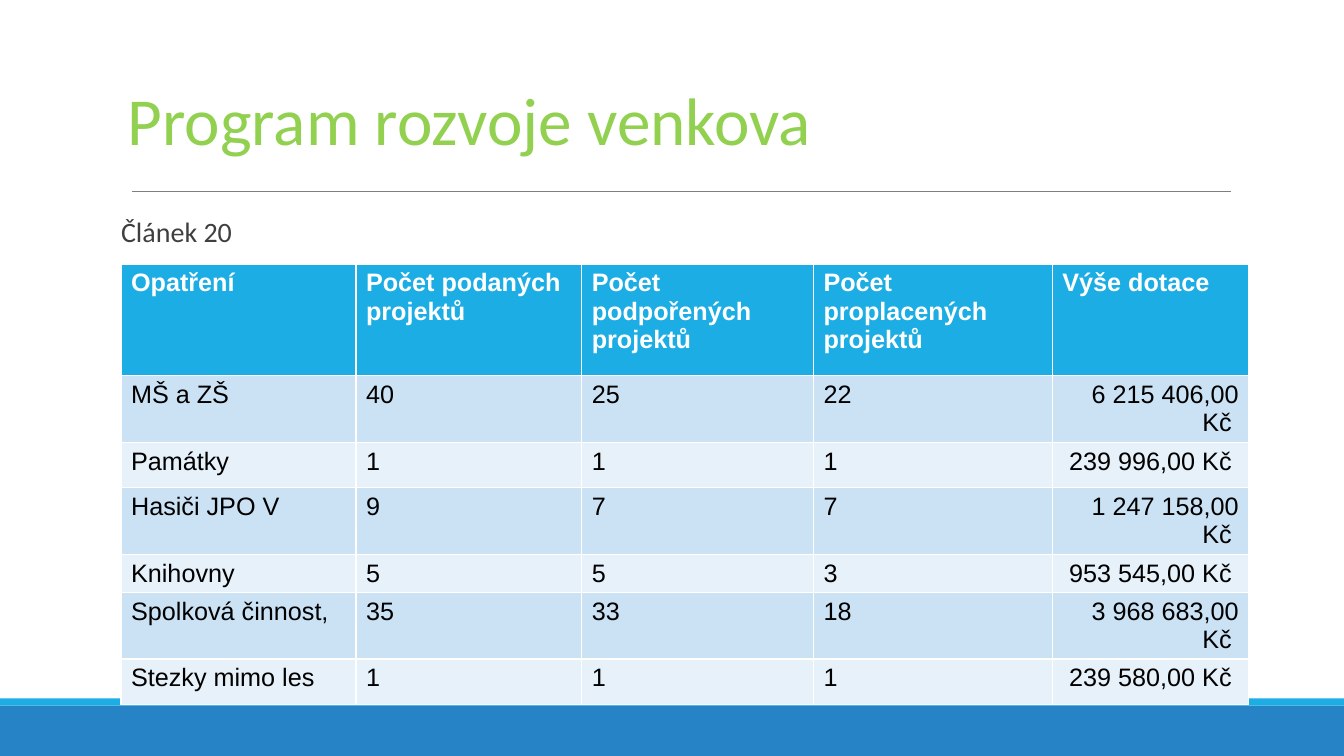
"""Build the slide on the rural programme with its table of grants."""
from lxml import etree
from pptx import Presentation, util as u
from pptx.dml.color import RGBColor as Rgb
from pptx.enum import shapes, text
from pptx.oxml.ns import qn


class Theme:
    lime, grey, rule = "92D050", "3F3F3F", "7F7F7F"
    sky, blue = "1CADE4", "2683C6"
    bands = "E7F1FA", "CBE2F5"
    white, black = "FFFFFF", "000000"
    head, body, cell = 48, 20, 18
    sans, grid = "Calibri", "Arial"


def write(frame, words, size, color, face=Theme.sans, bold=False,
          align=text.PP_ALIGN.LEFT, space=1.0):
    para = frame.paragraphs[0]
    props = para._p.get_or_add_pPr()
    props.set("marL", "0")
    props.set("indent", "0")
    etree.SubElement(props, qn("a:buNone"))
    para.alignment = align
    para.line_spacing = space
    para.space_before = u.Pt(0)
    run = para.add_run()
    run.text = words
    run.font.size = u.Pt(size)
    run.font.name = face
    run.font.bold = bold
    run.font.color.rgb = Rgb.from_string(color)


def place(shape, left, top, width, height):
    shape.left, shape.top = u.Cm(left), u.Cm(top)
    shape.width, shape.height = u.Cm(width), u.Cm(height)


deck = Presentation()
deck.slide_width, deck.slide_height = u.Cm(33.87), u.Cm(19.05)
slide = deck.slides.add_slide(deck.slide_layouts[1])

for top, high, color in ((17.78, 1.27, Theme.blue), (17.6, 0.18, Theme.sky)):
    band = slide.shapes.add_shape(
        shapes.MSO_SHAPE.RECTANGLE, 0, u.Cm(top), deck.slide_width, u.Cm(high))
    band.shadow.inherit = False
    band.fill.solid()
    band.fill.fore_color.rgb = Rgb.from_string(color)
    band.line.fill.background()

rule = slide.shapes.add_connector(
    shapes.MSO_CONNECTOR.STRAIGHT, u.Cm(3.33), u.Cm(4.83), u.Cm(31.01), u.Cm(4.83))
rule.line.color.rgb = Rgb.from_string(Theme.rule)
rule.line.width = u.Pt(0.75)
etree.SubElement(rule._element.spPr, qn("a:effectLst"))

title = slide.shapes.title
place(title, 2.97, 0.99, 27.94, 3.15)
title.text_frame.auto_size = text.MSO_AUTO_SIZE.NONE
title.text_frame.vertical_anchor = text.MSO_ANCHOR.BOTTOM
write(title.text_frame, "Program rozvoje venkova", Theme.head, Theme.lime, space=0.85)

body = slide.placeholders[1]
place(body, 3.05, 5.38, 27.94, 10.9)
body.text_frame.auto_size = text.MSO_AUTO_SIZE.NONE
body.text_frame.margin_left = body.text_frame.margin_right = 0
write(body.text_frame, "Článek 20", Theme.body, Theme.grey, space=0.9)

rows = [
    ("Opatření", "Počet podaných projektů", "Počet podpořených projektů",
     "Počet proplacených projektů", "Výše dotace"),
    ("MŠ a ZŠ", "40", "25", "22", "6 215 406,00 Kč "),
    ("Památky", "1", "1", "1", "239 996,00 Kč "),
    ("Hasiči JPO V", "9", "7", "7", "1 247 158,00 Kč "),
    ("Knihovny", "5", "5", "3", "953 545,00 Kč "),
    ("Spolková činnost,", "35", "33", "18", "3 968 683,00 Kč "),
    ("Stezky mimo les", "1", "1", "1", "239 580,00 Kč "),
]
wides = 5.92, 5.69, 5.84, 6.02, 4.95
highs = 2.82, 1.14, 1.14, 0.58, 0.58, 1.19, 1.14
grants = slide.shapes.add_table(
    len(rows), len(wides), u.Cm(3.05), u.Cm(6.65),
    u.Cm(sum(wides)), u.Cm(sum(highs))).table
for col, wide in zip(grants.columns, wides):
    col.width = u.Cm(wide)
for r, (row, high) in enumerate(zip(rows, highs)):
    grants.rows[r].height = u.Cm(high)
    head = r == 0
    for c, words in enumerate(row):
        cell = grants.cell(r, c)
        cell.fill.solid()
        cell.fill.fore_color.rgb = Rgb.from_string(
            Theme.sky if head else Theme.bands[r % 2])
        money = c == 4 and not head
        write(cell.text_frame, words, Theme.cell,
              Theme.white if head else Theme.black, face=Theme.grid, bold=head,
              align=text.PP_ALIGN.RIGHT if money else text.PP_ALIGN.LEFT)

deck.save("out.pptx")
